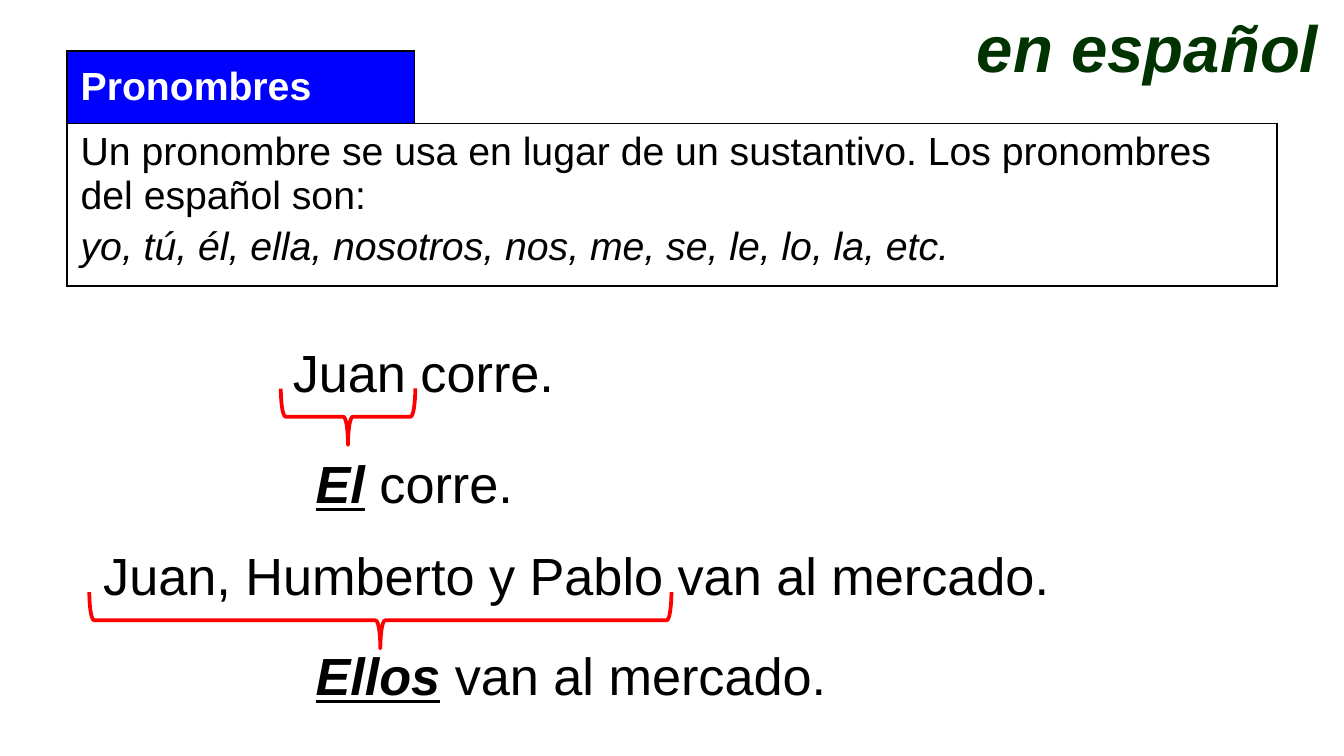
from dataclasses import dataclass

from lxml.etree import SubElement
from pptx import Presentation
from pptx.dml.color import RGBColor
from pptx.enum.shapes import MSO_SHAPE as Shape
from pptx.enum.text import MSO_ANCHOR as Anchor, MSO_AUTO_SIZE as AutoSize, PP_ALIGN as Align
from pptx.oxml.ns import qn
from pptx.util import Pt


@dataclass(frozen=True)
class Theme:
    font: str = "Arial"
    ink: str = "000000"
    heading: str = "003300"
    label: str = "FFFFFF"
    label_fill: str = "0000FF"
    brace: str = "FF0000"
    heading_size: int = 35
    table_size: int = 21
    example_size: int = 28


THEME = Theme()
PRONOUN = {"bold": True, "italic": True, "underline": True}
SIDES = {"left": "a:lnL", "right": "a:lnR", "top": "a:lnT", "bottom": "a:lnB"}


def apply_format(target, values):
    for name, value in values.items():
        setattr(target, name, value)


def add_run(paragraph, text, size, color, **style):
    run = paragraph.add_run()
    run.text = text
    apply_format(run.font, {"name": THEME.font, "size": Pt(size), **style})
    run.font.color.rgb = RGBColor.from_string(color)


def add_heading(slide, text):
    heading = slide.shapes.title
    apply_format(heading, {"left": Pt(516.2), "top": Pt(0),
                           "width": Pt(208), "height": Pt(49.7)})
    apply_format(heading.text_frame, {"word_wrap": False, "vertical_anchor": Anchor.TOP,
                                      "auto_size": AutoSize.SHAPE_TO_FIT_TEXT})
    paragraph = heading.text_frame.paragraphs[0]
    paragraph.alignment = Align.LEFT
    add_run(paragraph, text, THEME.heading_size, THEME.heading, bold=True, italic=True)


def set_borders(cell, visible):
    """Draw the named sides and hide the others."""
    properties = cell._tc.get_or_add_tcPr()
    for position, (side, tag) in enumerate(SIDES.items()):
        line = SubElement(properties, qn(tag), w=str(Pt(1)))
        if side in visible:
            fill = SubElement(line, qn("a:solidFill"))
            SubElement(fill, qn("a:srgbClr"), val=THEME.ink)
        else:
            SubElement(line, qn("a:noFill"))
        # Borders come before the cell fill
        properties.insert(position, line)


def fill_cell(cell, paragraphs, color, **cell_format):
    apply_format(cell, {"margin_left": Pt(7.2), "margin_right": Pt(7.2),
                        "margin_top": Pt(3.6), "margin_bottom": Pt(3.6), **cell_format})
    frame = cell.text_frame
    for index, (text, style) in enumerate(paragraphs):
        paragraph = frame.add_paragraph() if index else frame.paragraphs[0]
        if index:
            paragraph.space_before = Pt(4.2)
        add_run(paragraph, text, THEME.table_size, color, **style)


def add_definition(slide, term, explanation):
    table = slide.shapes.add_table(2, 2, Pt(36), Pt(27.2), Pt(648), Pt(125.3)).table
    apply_format(table, {"first_row": False, "horz_banding": False})
    for column, width in zip(table.columns, (186, 462)):
        column.width = Pt(width)
    for row, height in zip(table.rows, (38.9, 86.4)):
        row.height = Pt(height)

    term_cell, corner = table.cell(0, 0), table.cell(0, 1)
    body, body_end = table.cell(1, 0), table.cell(1, 1)
    body.merge(body_end)
    for cell in (term_cell, corner, body, body_end):
        cell.fill.background()
        set_borders(cell, ("left", "bottom") if cell is corner else SIDES)
    term_cell.fill.solid()
    term_cell.fill.fore_color.rgb = RGBColor.from_string(THEME.label_fill)

    fill_cell(term_cell, [(term, {"bold": True})], THEME.label,
              vertical_anchor=Anchor.MIDDLE)
    fill_cell(body, explanation, THEME.ink)


def add_sentence(slide, left, top, width, runs):
    sentence = slide.shapes.add_textbox(Pt(left), Pt(top), Pt(width), Pt(41))
    apply_format(sentence.text_frame, {"word_wrap": True,
                                       "auto_size": AutoSize.SHAPE_TO_FIT_TEXT})
    for text, style in runs:
        add_run(sentence.text_frame.paragraphs[0], text,
                THEME.example_size, THEME.ink, **style)


def add_under_brace(slide, left, top, span, depth=30.2):
    """Turn a left brace so that it opens upwards over the given span."""
    shift = (span - depth) / 2
    brace = slide.shapes.add_shape(Shape.LEFT_BRACE, Pt(left + shift), Pt(top - shift),
                                   Pt(depth), Pt(span))
    brace.rotation = 270
    brace.shadow.inherit = False
    brace.fill.background()
    brace.line.color.rgb = RGBColor.from_string(THEME.brace)
    brace.line.width = Pt(2)


def main():
    deck = Presentation()
    apply_format(deck, {"slide_width": Pt(720), "slide_height": Pt(405)})
    slide = deck.slides.add_slide(deck.slide_layouts[5])

    # Heading and definition
    add_heading(slide, "en español")
    add_definition(slide, "Pronombres", [
        ("Un pronombre se usa en lugar de un sustantivo. "
         "Los pronombres del español son:", {}),
        ("yo, tú, él, ella, nosotros, nos, me, se, le, lo, la, etc.", {"italic": True}),
    ])

    # Examples: each subject and the pronoun that replaces it
    sentences = [
        (149.8, 178.6, 203.8, [("Juan corre.", {})]),
        (48.2, 287.3, 689.8, [("Juan, Humberto y Pablo van al mercado.", {})]),
        (162, 238.3, 342, [("El", PRONOUN), (" corre.", {})]),
        (162, 341.3, 306, [("Ellos", PRONOUN), (" van al mercado.", {})]),
    ]
    for left, top, width, runs in sentences:
        add_sentence(slide, left, top, width, runs)

    # Braces under the subjects
    for left, top, span in ((47.9, 317.2, 311.8), (150.5, 208.1, 72)):
        add_under_brace(slide, left, top, span)

    deck.save("out.pptx")


if __name__ == "__main__":
    main()
